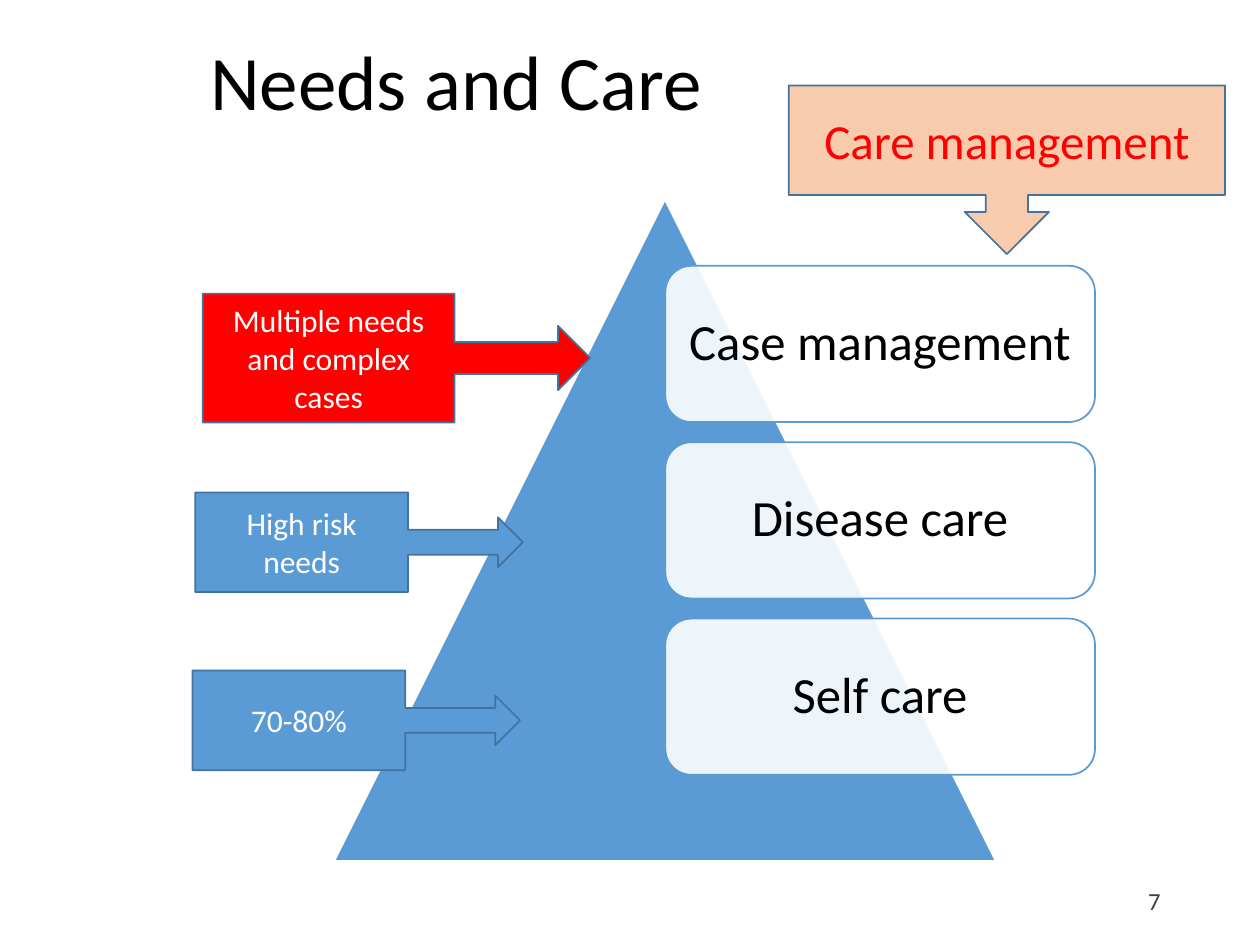
from typing import NamedTuple

from lxml.etree import SubElement
from pptx import Presentation
from pptx.dml.color import RGBColor
from pptx.enum.shapes import MSO_SHAPE
from pptx.enum.text import MSO_ANCHOR, PP_ALIGN
from pptx.oxml.ns import qn
from pptx.util import Pt

BLACK = RGBColor(0x00, 0x00, 0x00)
WHITE = RGBColor(0xFF, 0xFF, 0xFF)
GREY = RGBColor(0x40, 0x40, 0x40)
RED = RGBColor(0xFF, 0x00, 0x00)
BLUE = RGBColor(0x5B, 0x9B, 0xD5)
DARK_BLUE = RGBColor(0x43, 0x73, 0x9E)
PEACH = RGBColor(0xF8, 0xCB, 0xAD)
FONT = "Calibri"


class Box(NamedTuple):
    left: float
    top: float
    width: float
    height: float

    def lengths(self):
        return [Pt(v) for v in self]


class Callout(NamedTuple):
    text: str
    box: Box
    fill: RGBColor
    color: RGBColor = WHITE
    size: float = 18
    kind: MSO_SHAPE = MSO_SHAPE.RIGHT_ARROW_CALLOUT


CARE_LEVELS = ["Case management", "Disease care", "Self care"]
FIRST_CARD = Box(380.2, 151.9, 245.5, 89.3)
CARD_PITCH = 100.8

CALLOUTS = [
    Callout("Multiple needs and complex cases", Box(115.9, 167.8, 221.3, 73.6), RED),
    Callout("High risk needs", Box(111.6, 281.4, 187.2, 56.9), BLUE),
    Callout("70-80%", Box(110, 383.2, 187.2, 56.9), BLUE),
    Callout("Care management", Box(450.7, 48.8, 249.3, 96.4), PEACH, RED, 28,
            MSO_SHAPE.DOWN_ARROW_CALLOUT),
]


def write(sp, text: str, size: float, color: RGBColor, align=PP_ALIGN.CENTER,
          anchor=MSO_ANCHOR.MIDDLE, spacing: float = 1.0) -> None:
    tf = sp.text_frame
    tf.word_wrap = True
    tf.vertical_anchor = anchor
    p = tf.paragraphs[0]
    p.alignment = align
    p.line_spacing = spacing
    r = p.add_run()
    r.text = text
    r.font.name = FONT
    r.font.size = Pt(size)
    r.font.color.rgb = color


def add_filled(s, kind, box: Box, fill: RGBColor, line: RGBColor):
    sp = s.shapes.add_shape(kind, *box.lengths())
    sp.shadow.inherit = False
    sp.fill.solid()
    sp.fill.fore_color.rgb = fill
    sp.line.color.rgb = line
    sp.line.width = Pt(1)
    return sp


def add_card(s, text: str, box: Box) -> None:
    """Add a slightly transparent rounded card for one level of care."""
    sp = add_filled(s, MSO_SHAPE.ROUNDED_RECTANGLE, box, WHITE, BLUE)
    color = sp.fill._xPr.find(qn("a:solidFill")).find(qn("a:srgbClr"))
    SubElement(color, qn("a:alpha"), val="90000")
    tf = sp.text_frame
    tf.margin_left = tf.margin_right = tf.margin_top = tf.margin_bottom = Pt(8.5)
    write(sp, text, 29, BLACK, spacing=0.9)


def add_callout(s, c: Callout) -> None:
    sp = add_filled(s, c.kind, c.box, c.fill, DARK_BLUE)
    write(sp, c.text, c.size, c.color)


def main() -> None:
    prs = Presentation()
    prs.slide_width, prs.slide_height = Pt(720), Pt(540)
    s = prs.slides.add_slide(prs.slide_layouts[6])

    title = s.shapes.add_textbox(*Box(113, 21.6, 590.4, 90).lengths())
    write(title, "Needs and Care", 44, BLACK, PP_ALIGN.LEFT, MSO_ANCHOR.TOP, 0.9)

    add_filled(s, MSO_SHAPE.ISOSCELES_TRIANGLE, Box(191, 114, 378, 378), BLUE, WHITE)
    for i, level in enumerate(CARE_LEVELS):
        add_card(s, level, FIRST_CARD._replace(top=FIRST_CARD.top + i * CARD_PITCH))
    for callout in CALLOUTS:
        add_callout(s, callout)

    number = s.shapes.add_textbox(*Box(508.3, 500.4, 162, 28.8).lengths())
    write(number, "7", 14, GREY, PP_ALIGN.RIGHT)

    prs.save("out.pptx")


if __name__ == "__main__":
    main()
